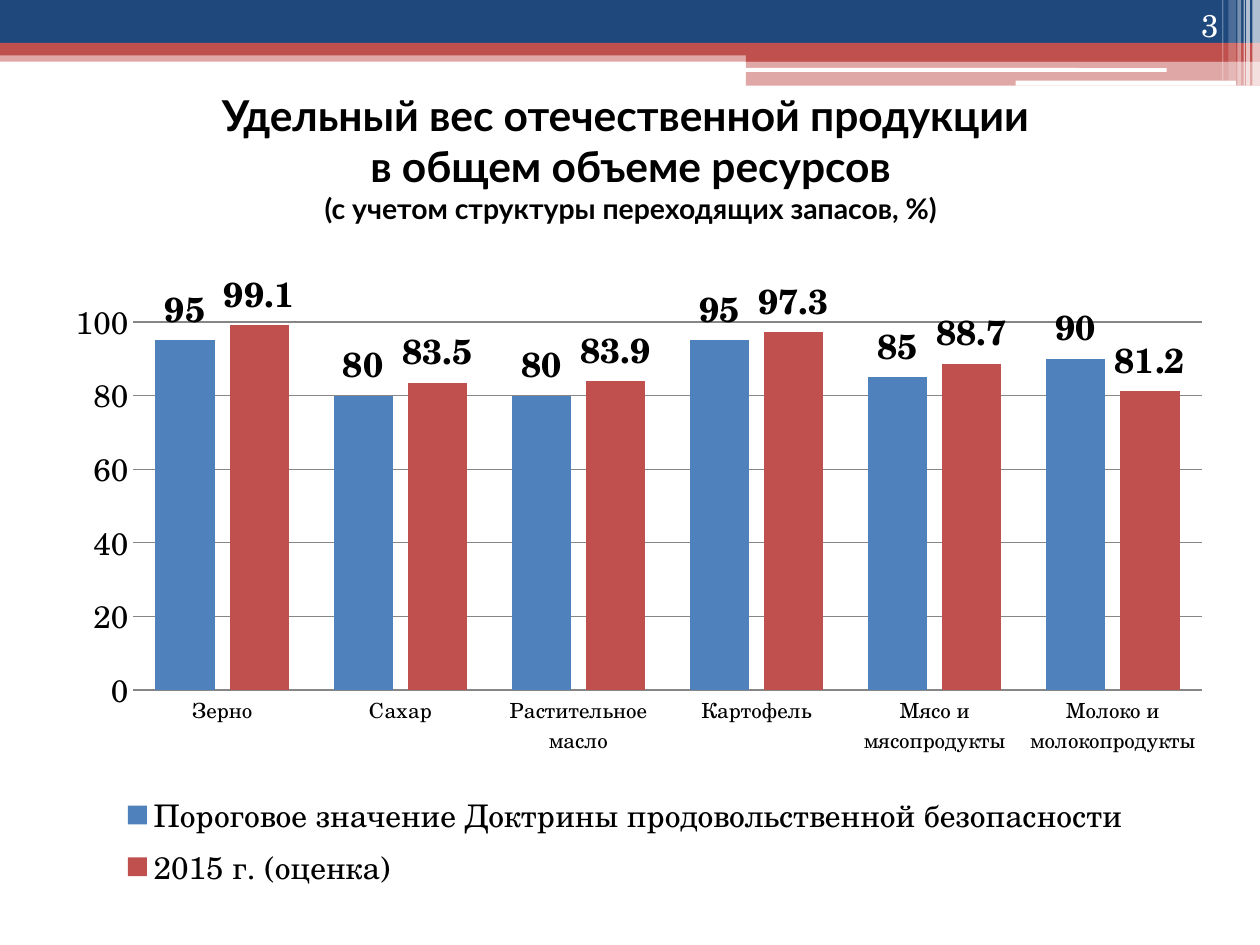
from lxml.etree import SubElement
from pptx import Presentation
from pptx.chart.data import CategoryChartData
from pptx.dml.color import RGBColor
from pptx.enum.chart import XL_CHART_TYPE, XL_LABEL_POSITION, XL_LEGEND_POSITION, XL_TICK_MARK
from pptx.enum.shapes import MSO_SHAPE
from pptx.enum.text import MSO_ANCHOR, PP_ALIGN
from pptx.oxml import parse_xml
from pptx.oxml.ns import nsdecls, qn
from pptx.util import Inches, Pt

COLORS = {"navy": "1F497D", "red": "C0504D", "blue": "4F81BD",
          "white": "FFFFFF", "black": "000000", "grid": "868686"}
HEADING_FONT, BODY_FONT = "Lato", "TeX Gyre Schola"


class SlideBuilder:
    def __init__(self, slide):
        self.slide = slide

    def color(self, name):
        return RGBColor.from_string(COLORS[name])

    def style_font(self, font, size, color="black", name=BODY_FONT, bold=False):
        font.name, font.size, font.bold = name, Pt(size), bold
        font.color.rgb = self.color(color)

    def bar(self, left, top, width, height, color, opacity=100, rounded=False):
        kind = MSO_SHAPE.ROUNDED_RECTANGLE if rounded else MSO_SHAPE.RECTANGLE
        shape = self.slide.shapes.add_shape(
            kind, Inches(left), Inches(top), Inches(width), Inches(height))
        shape.shadow.inherit = False
        shape.line.fill.background()
        shape.fill.solid()
        shape.fill.fore_color.rgb = self.color(color)
        if opacity < 100:
            color_element = next(shape.fill._xPr.iter(qn("a:srgbClr")))
            SubElement(color_element, qn("a:alpha")).set("val", str(opacity * 1000))

    def text(self, left, top, width, height, lines, align, anchor, **style):
        """Lines are (text, size) pairs, broken within one paragraph."""
        box = self.slide.shapes.add_textbox(
            Inches(left), Inches(top), Inches(width), Inches(height))
        frame = box.text_frame
        frame.word_wrap = True
        frame.vertical_anchor = anchor
        paragraph = frame.paragraphs[0]
        paragraph.alignment = align
        self.style_font(paragraph.font, lines[0][1], **style)
        for index, (words, size) in enumerate(lines):
            if index:
                paragraph.add_line_break()
            run = paragraph.add_run()
            run.text = words
            run.font.size = Pt(size)

    def column_chart(self, left, top, width, height, categories, series, plot_area):
        """Series are (name, color, values); plot_area holds chart fractions."""
        data = CategoryChartData()
        data.categories = categories
        for name, _, values in series:
            data.add_series(name, values)
        chart = self.slide.shapes.add_chart(
            XL_CHART_TYPE.COLUMN_CLUSTERED, Inches(left), Inches(top),
            Inches(width), Inches(height), data).chart
        self.style_font(chart.font, 18)
        chart.has_title = False
        chart.has_legend = True
        chart.legend.position = XL_LEGEND_POSITION.BOTTOM
        chart.legend.include_in_layout = False

        # Axes
        for axis in (chart.category_axis, chart.value_axis):
            axis.major_tick_mark = axis.minor_tick_mark = XL_TICK_MARK.NONE
        chart.category_axis.format.line.color.rgb = self.color("grid")
        self.style_font(chart.category_axis.tick_labels.font, 12)
        value_axis = chart.value_axis
        value_axis.minimum_scale, value_axis.maximum_scale = 0, 100
        value_axis.major_unit = 20
        value_axis.format.line.fill.background()
        value_axis.major_gridlines.format.line.color.rgb = self.color("grid")

        # Columns and their labels
        plot = chart.plots[0]
        plot.gap_width, plot.overlap = 75, -25
        plot.vary_by_categories = False
        for column, (_, color, _) in zip(plot.series, series):
            column.format.fill.solid()
            column.format.fill.fore_color.rgb = self.color(color)
            labels = column.data_labels
            labels.show_value = True
            labels.position = XL_LABEL_POSITION.OUTSIDE_END
            self.style_font(labels.font, 20, bold=True)

        # Fixed inner plot area
        sizes = "".join(f'<c:{key} val="{value}"/>'
                        for key, value in zip("xywh", plot_area))
        area = chart._chartSpace.chart.plotArea
        for layout in area.findall(qn("c:layout")):
            area.remove(layout)
        area.insert(0, parse_xml(
            f'<c:layout {nsdecls("c")}><c:manualLayout><c:layoutTarget val="inner"/>'
            f'<c:xMode val="edge"/><c:yMode val="edge"/>{sizes}'
            '</c:manualLayout></c:layout>'))


def main():
    presentation = Presentation()
    presentation.slide_width, presentation.slide_height = Inches(10), Inches(7.5)
    builder = SlideBuilder(presentation.slides.add_slide(presentation.slide_layouts[6]))

    # Header bands
    builder.bar(0, 0.4, 10, 0.09, "red", 50)
    builder.bar(0, 0, 10, 0.34, "navy")
    builder.bar(0, 0.34, 10, 0.1, "red")
    builder.bar(5.92, 0.39, 4.08, 0.1, "red")
    builder.bar(5.92, 0.48, 4.08, 0.2, "red", 50)
    builder.bar(5.91, 0.54, 3.35, 0.03, "white", rounded=True)
    builder.bar(8.06, 0.64, 1.75, 0.04, "white", rounded=True)

    # Translucent stripes at the right edge
    for left, width, height, opacity in [
            (9.94, 0.06, 0.68, 65), (9.89, 0.03, 0.68, 65), (9.87, 0.01, 0.68, 60),
            (9.82, 0.03, 0.68, 40), (9.75, 0.06, 0.64, 20), (9.7, 0.01, 0.64, 30)]:
        builder.bar(left, 0, width, height, "white", opacity)

    # Title
    builder.text(0.16, 0.62, 9.69, 1.26,
                 [("Удельный вес отечественной продукции ", 24.3),
                  ("в общем объеме ресурсов", 24.3),
                  ("(с учетом структуры переходящих запасов, %)", 16.2)],
                 PP_ALIGN.CENTER, MSO_ANCHOR.MIDDLE, name=HEADING_FONT, bold=True)

    # Threshold against estimate
    builder.column_chart(
        0.2, 2.11, 9.53, 5,
        ["Зерно", "Сахар", "Растительное масло", "Картофель",
         "Мясо и мясопродукты", "Молоко и молокопродукты"],
        [("Пороговое значение Доктрины продовольственной безопасности", "blue",
          [95, 80, 80, 95, 85, 90]),
         ("2015 г. (оценка)", "red", [99.1, 83.5, 83.9, 97.3, 88.7, 81.2])],
        plot_area=(0.09, 0.08, 0.89, 0.59))

    # Slide number
    builder.text(8.94, 0, 0.83, 0.4, [("3", 18)], PP_ALIGN.RIGHT, MSO_ANCHOR.BOTTOM,
                 color="white")
    presentation.save("out.pptx")


if __name__ == "__main__":
    main()
